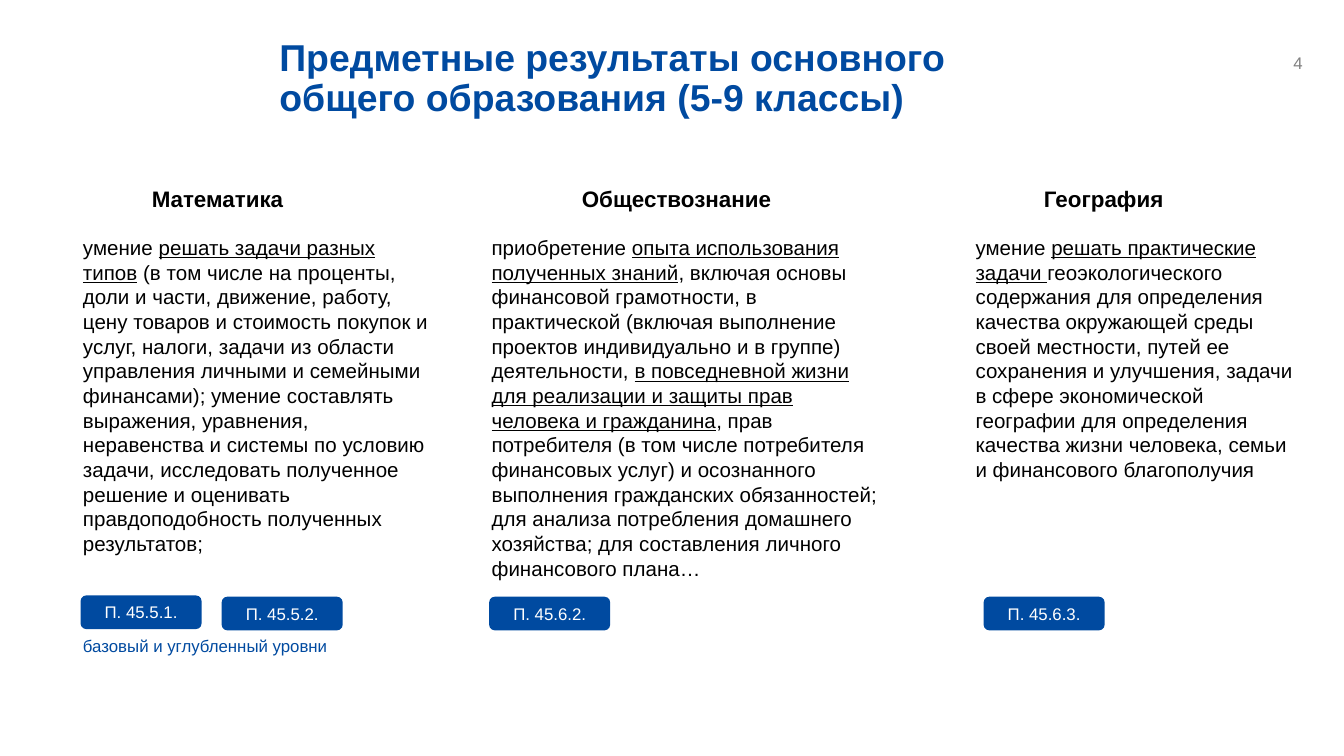
from dataclasses import dataclass

from pptx import Presentation
from pptx.dml.color import RGBColor
from pptx.enum import shapes, text
from pptx.util import Pt


@dataclass(frozen=True)
class Theme:
    font: str = "Arial"
    blue: str = "004AA0"
    black: str = "000000"
    gray: str = "808080"
    white: str = "FFFFFF"
    title: int = 20
    heading: int = 12
    body: int = 11
    small: int = 9


@dataclass(frozen=True)
class Subject:
    name: str
    name_left: float
    name_width: float
    left: float
    width: float
    height: float
    outcome: tuple  # plain and underlined parts take turns
    badges: tuple  # (label, left, top)


SUBJECTS = (
    Subject(
        "Математика", 74.2, 85.7, 37.4, 201.6, 180.7,
        ("умение ",
         "решать задачи разных типов",
         " (в том числе на проценты, доли и части, движение, работу, цену товаров "
         "и стоимость покупок и услуг, налоги, задачи из области управления личными "
         "и семейными финансами); умение составлять выражения, уравнения, неравенства "
         "и системы по условию задачи, исследовать полученное решение и оценивать "
         "правдоподобность полученных результатов;"),
        (("П. 45.5.1.", 43.2, 319), ("П. 45.5.2.", 118.8, 319.7)),
    ),
    Subject(
        "Обществознание", 304.6, 116.6, 256.3, 225.4, 180.7,
        ("приобретение ",
         "опыта использования полученных знаний",
         ", включая основы финансовой грамотности, в практической (включая выполнение "
         "проектов индивидуально и в группе) деятельности, ",
         "в повседневной жизни для реализации и защиты прав человека и гражданина",
         ", прав потребителя (в том числе потребителя финансовых услуг) и осознанного "
         "выполнения гражданских обязанностей; для анализа потребления домашнего "
         "хозяйства; для составления личного финансового плана…"),
        (("П. 45.6.2.", 262.1, 319.7),),
    ),
    Subject(
        "География", 552.2, 79.2, 515.5, 188.6, 140.4,
        ("умение ",
         "решать практические задачи ",
         "геоэкологического содержания для определения качества окружающей среды "
         "своей местности, путей ее сохранения и улучшения, задачи в сфере "
         "экономической географии для определения качества жизни человека, семьи "
         "и финансового благополучия"),
        (("П. 45.6.3.", 527, 319.7),),
    ),
)


class SlideBuilder:
    def __init__(self, slide, theme):
        self.slide = slide
        self.theme = theme

    def style(self, paragraph, size, color, bold=False):
        for run in paragraph.runs:
            run.font.name = self.theme.font
            run.font.size = Pt(size)
            run.font.bold = bold
            run.font.color.rgb = RGBColor.from_string(color)

    def frame(self, left, top, width, height, wrap=True, grow=True):
        """Add a text box and return its text frame."""
        box = self.slide.shapes.add_textbox(Pt(left), Pt(top), Pt(width), Pt(height))
        box.text_frame.word_wrap = wrap
        if grow:
            box.text_frame.auto_size = text.MSO_AUTO_SIZE.SHAPE_TO_FIT_TEXT
        return box.text_frame

    def title(self, wording):
        frame = self.frame(142.6, 17.3, 527.8, 33.8, grow=False)
        frame.text = wording
        frame.paragraphs[0].line_spacing = 0.9
        self.style(frame.paragraphs[0], self.theme.title, self.theme.blue, bold=True)

    def page_number(self, number):
        frame = self.frame(670.3, 23, 34.6, 21.6, grow=False)
        frame.text = number
        frame.vertical_anchor = text.MSO_ANCHOR.MIDDLE
        frame.paragraphs[0].alignment = text.PP_ALIGN.RIGHT
        self.style(frame.paragraphs[0], self.theme.small, self.theme.gray)

    def heading(self, wording, left, width):
        frame = self.frame(left, 95.8, width, 21.6, wrap=False)
        frame.text = wording
        self.style(frame.paragraphs[0], self.theme.heading, self.theme.black, bold=True)

    def outcome(self, parts, left, width, height):
        paragraph = self.frame(left, 122.4, width, height).paragraphs[0]
        for index, part in enumerate(parts):
            run = paragraph.add_run()
            run.text = part
            run.font.underline = index % 2 == 1
        self.style(paragraph, self.theme.body, self.theme.black)

    def badge(self, label, left, top):
        badge = self.slide.shapes.add_shape(
            shapes.MSO_SHAPE.ROUNDED_RECTANGLE, Pt(left), Pt(top), Pt(64.8), Pt(18))
        badge.shadow.inherit = False
        badge.fill.solid()
        badge.fill.fore_color.rgb = RGBColor.from_string(self.theme.blue)
        badge.line.fill.background()
        frame = badge.text_frame
        frame.text = label
        frame.vertical_anchor = text.MSO_ANCHOR.MIDDLE
        frame.paragraphs[0].alignment = text.PP_ALIGN.CENTER
        self.style(frame.paragraphs[0], self.theme.small, self.theme.white)

    def footnote(self, wording, left):
        frame = self.frame(left, 337, 169.9, 18)
        frame.text = wording
        self.style(frame.paragraphs[0], self.theme.small, self.theme.blue)


def main():
    deck = Presentation()
    deck.slide_width, deck.slide_height = Pt(720), Pt(405)
    builder = SlideBuilder(deck.slides.add_slide(deck.slide_layouts[6]), Theme())

    builder.title("Предметные результаты основного\vобщего образования (5-9 классы)")
    builder.page_number("4")
    for subject in SUBJECTS:
        builder.heading(subject.name, subject.name_left, subject.name_width)
        builder.outcome(subject.outcome, subject.left, subject.width, subject.height)
        for badge in subject.badges:
            builder.badge(*badge)
    builder.footnote("базовый и углубленный уровни", SUBJECTS[0].left)

    deck.save("out.pptx")


if __name__ == "__main__":
    main()
